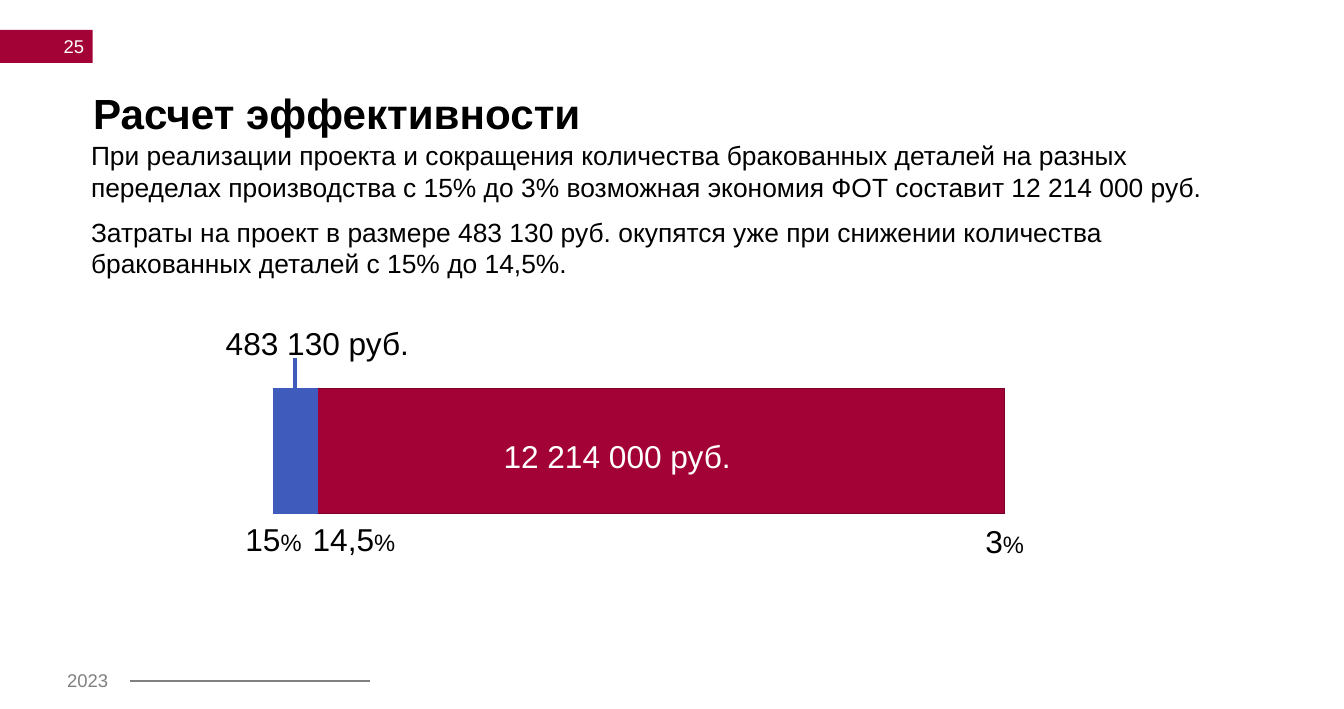
from pptx import Presentation
from pptx.dml.color import RGBColor
from pptx.enum.shapes import MSO_CONNECTOR as CONN, MSO_SHAPE as SHAPE
from pptx.enum.text import MSO_ANCHOR as ANCHOR, PP_ALIGN as ALIGN
from pptx.oxml.ns import qn
from pptx.util import Inches, Pt
from lxml.etree import SubElement

W, H = Inches(14.17), Inches(7.48)
FONT = "Arial"
COLORS = {"crimson": "A30236", "crimson_edge": "790128", "blue": "3F5CBD",
          "gray": "808080", "white": "FFFFFF", "black": "000000"}


def rgb(name):
    """Return the named palette colour."""
    return RGBColor.from_string(COLORS[name])


def area(x, y, w, h):
    """Turn percentages of the slide into a box in EMU."""
    return tuple(int(v * side / 100) for v, side in zip((x, y, w, h), (W, H, W, H)))


def inside(box, x, y, w, h):
    """Turn shares of a box into a box in EMU."""
    left, top, width, height = box
    return (int(left + x * width), int(top + y * height),
            int(w * width), int(h * height))


def add_run(p, text, size, color="black", bold=False):
    """Add one formatted run to a paragraph."""
    r = p.add_run()
    r.text = text
    r.font.name, r.font.size, r.font.bold = FONT, Pt(size), bold
    r.font.color.rgb = rgb(color)


def set_margins(tf, side=0, end=0):
    """Set the horizontal and vertical insets of a text frame."""
    tf.margin_left = tf.margin_right = side
    tf.margin_top = tf.margin_bottom = end


def add_rect(s, box, fill, edge=None):
    """Add a flat rectangle."""
    sp = s.shapes.add_shape(SHAPE.RECTANGLE, *box)
    sp.shadow.inherit = False
    sp.fill.solid()
    sp.fill.fore_color.rgb = rgb(fill)
    if edge:
        sp.line.color.rgb, sp.line.width = rgb(edge), Pt(1)
    else:
        sp.line.fill.background()
    return sp


def add_line(s, x1, y1, x2, y2, color, width):
    """Add a straight line without a shadow."""
    line = s.shapes.add_connector(CONN.STRAIGHT, x1, y1, x2, y2)
    line.line.color.rgb, line.line.width = rgb(color), Pt(width)
    SubElement(line._element.spPr, qn("a:effectLst"))


def add_page_badge(s, box, number):
    """Draw the page number on its edge tab."""
    tf = add_rect(s, box, "crimson").text_frame
    set_margins(tf, Inches(0.09))
    tf.vertical_anchor = ANCHOR.MIDDLE
    p = tf.paragraphs[0]
    p.alignment = ALIGN.RIGHT
    add_run(p, number, 14, "white")


def add_footer(s, box, year):
    """Draw the year and the rule to its right."""
    left, top, width, height = box
    tf = s.shapes.add_textbox(*inside(box, 0, 0, 0.2, 1)).text_frame
    add_run(tf.paragraphs[0], year, 14, "gray")
    y = int(top + height * 0.53)
    add_line(s, int(left + width * 0.23), y, left + width, y, "gray", 1.5)


def add_title(s, box, text):
    """Place and format the title placeholder."""
    sp = s.shapes.title
    sp.left, sp.top, sp.width, sp.height = box
    tf = sp.text_frame
    set_margins(tf)
    tf.vertical_anchor = ANCHOR.TOP
    p = tf.paragraphs[0]
    p.alignment, p.line_spacing = ALIGN.LEFT, 0.9
    add_run(p, text, 32, bold=True)


def add_body(s, box, paragraphs):
    """Write the explanatory paragraphs."""
    tf = s.shapes.add_textbox(*box).text_frame
    tf.word_wrap = True
    set_margins(tf)
    for i, text in enumerate(paragraphs):
        p = tf.add_paragraph() if i else tf.paragraphs[0]
        p.space_before = Pt(10 if i else 0)
        add_run(p, text, 20)


def add_savings_bar(s, box):
    """Draw the cost and savings bar with its labels."""
    left, top, width, height = box
    cost = 0.06
    add_rect(s, inside(box, cost, 0, 1 - cost, 1), "crimson", "crimson_edge")
    add_rect(s, inside(box, 0, 0, cost, 1), "blue", "blue")
    labels = [
        (0, 1.01, 0.1, "15", "%", "black"),
        (0.11, 1.01, 0.14, "14,5", "%", "black"),
        (1, 1.03, 0.1, "3", "%", "black"),
        (0.47, 0.35, 0.34, "12 214 000 руб.", "", "white"),
        (cost, -0.55, 0.28, "483 130 руб.", "", "black"),
    ]
    for center, y, w, value, unit, color in labels:
        spot = inside(box, center - w / 2, y, w, 0.38)
        tf = s.shapes.add_textbox(*spot).text_frame
        tf.word_wrap = False
        set_margins(tf, end=Inches(0.05))
        p = tf.paragraphs[0]
        p.alignment = ALIGN.CENTER
        add_run(p, value, 24, color)
        if unit:
            add_run(p, unit, 18, color)
    x = int(left + width * cost / 2)
    add_line(s, x, top, x, int(top - height * 0.24), "blue", 3)


def main():
    """Build the efficiency slide."""
    prs = Presentation()
    prs.slide_width, prs.slide_height = W, H
    s = prs.slides.add_slide(prs.slide_layouts[5])
    add_page_badge(s, area(0, 4.2, 6.9, 4.68), "25")
    add_footer(s, area(4.3, 93.7, 23.2, 4.55), "2023")
    add_title(s, area(6.92, 13.1, 73.89, 10.43), "Расчет эффективности")
    add_body(s, area(6.77, 19.65, 86.45, 21.93), [
        "При реализации проекта и сокращения количества бракованных деталей "
        "на разных переделах производства с 15% до 3% возможная экономия ФОТ "
        "составит 12 214 000 руб.",
        "Затраты на проект в размере 483 130 руб. окупятся уже при снижении "
        "количества бракованных деталей с 15% до 14,5%.",
    ])
    add_savings_bar(s, area(20.35, 54.8, 54.41, 17.65))
    prs.save("out.pptx")


if __name__ == "__main__":
    main()
